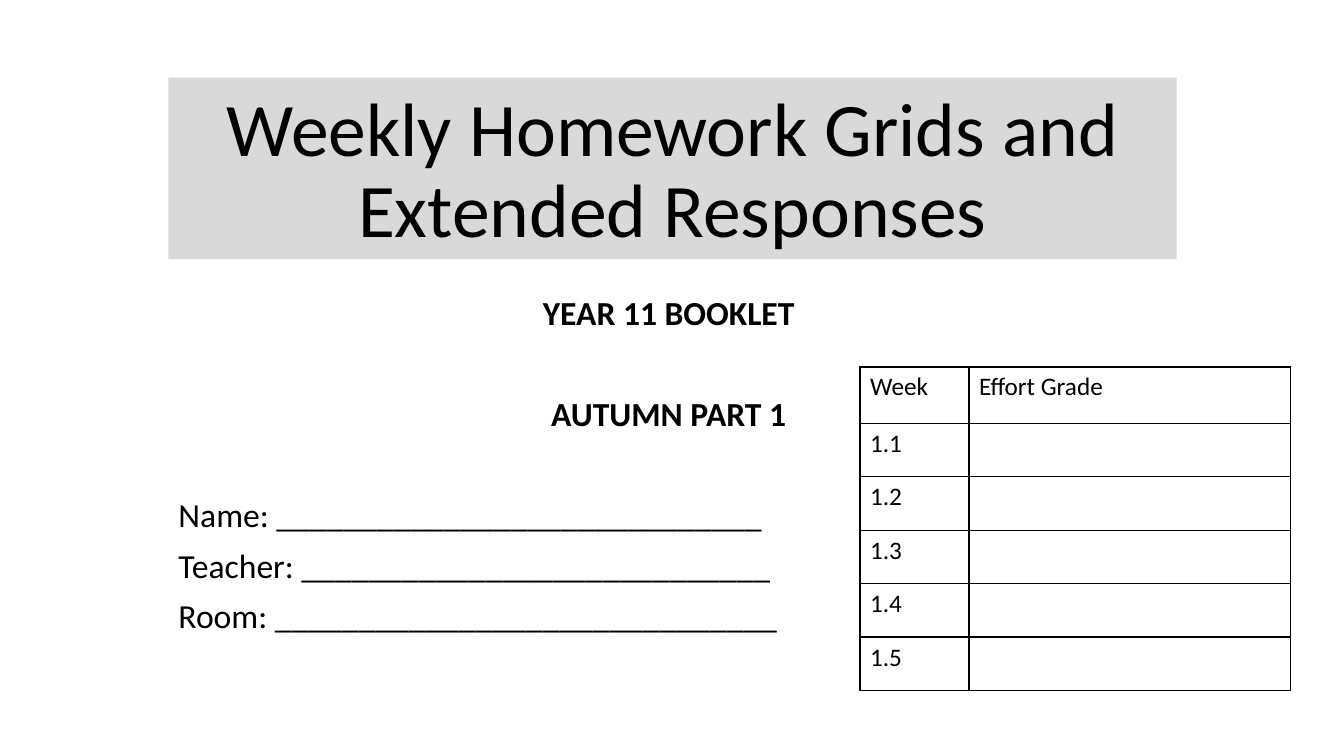
from lxml import etree
from pptx import Presentation
from pptx import util as u
from pptx.dml.color import RGBColor
from pptx.enum import text
from pptx.oxml.ns import qn

COLORS = {"ink": "000000", "paper": "FFFFFF", "banner": "D9D9D9"}
FONT = "Calibri"
HEADINGS = ["YEAR 11 BOOKLET ", "AUTUMN PART 1 "]
FIELDS = {"Name": 29, "Teacher": 28, "Room": 30}  # label: length of the rule
WEEKS = [f"1.{number}" for number in range(1, 6)]


def color(name):
    return RGBColor.from_string(COLORS[name])


def place(shape, box):
    shape.left, shape.top, shape.width, shape.height = map(u.Inches, box)


def style_font(font, size, bold=False):
    font.name, font.size, font.bold = FONT, u.Pt(size), bold
    font.color.rgb = color("ink")


def style_paragraph(paragraph, size, align, bold=False, before=0):
    paragraph.alignment = align
    paragraph.line_spacing = 0.9
    paragraph.space_before = u.Pt(before)
    for run in paragraph.runs:
        style_font(run.font, size, bold)


def add_title(slide, box):
    title = slide.shapes.title
    place(title, box)
    title.fill.solid()
    title.fill.fore_color.rgb = color("banner")
    frame = title.text_frame
    frame.text = "Weekly Homework Grids and Extended Responses"
    frame.auto_size = text.MSO_AUTO_SIZE.NONE
    frame.vertical_anchor = text.MSO_ANCHOR.BOTTOM
    style_paragraph(frame.paragraphs[0], 54, text.PP_ALIGN.CENTER)


def add_details(slide, box):
    details = slide.placeholders[1]
    place(details, box)
    frame = details.text_frame
    fields = [f"{label}: {'_' * length}" for label, length in FIELDS.items()]
    frame.text = "\n".join(HEADINGS + fields)
    frame.auto_size = text.MSO_AUTO_SIZE.NONE
    frame.vertical_anchor = text.MSO_ANCHOR.TOP
    for index, paragraph in enumerate(frame.paragraphs):
        heading = index < len(HEADINGS)
        align = text.PP_ALIGN.CENTER if heading else text.PP_ALIGN.LEFT
        # A wide gap sets off the second heading and the first field
        before = 46.4 if index in (1, len(HEADINGS)) else 10
        style_paragraph(paragraph, 24, align, heading, before)


def add_borders(cell):
    properties = cell._tc.get_or_add_tcPr()
    for position, side in enumerate(("lnL", "lnR", "lnT", "lnB")):
        line = etree.Element(qn(f"a:{side}"), w=str(u.Pt(1)))
        fill = etree.SubElement(line, qn("a:solidFill"))
        etree.SubElement(fill, qn("a:srgbClr"), val=COLORS["ink"])
        properties.insert(position, line)


def add_grades(slide, box):
    rows = [("Week", "Effort Grade")] + [(week, "") for week in WEEKS]
    table = slide.shapes.add_table(len(rows), 2, *map(u.Inches, box)).table
    table.first_row = table.horz_banding = False
    week_width, header_height = 1.08, 0.56
    table.columns[0].width = u.Inches(week_width)
    table.columns[1].width = u.Inches(box[2] - week_width)
    for index, values in enumerate(rows):
        week_height = (box[3] - header_height) / len(WEEKS)
        table.rows[index].height = u.Inches(week_height if index else header_height)
        for column, value in enumerate(values):
            cell = table.cell(index, column)
            cell.text = value
            cell.fill.solid()
            cell.fill.fore_color.rgb = color("paper")
            style_font(cell.text_frame.paragraphs[0].font, 18)
            for run in cell.text_frame.paragraphs[0].runs:
                style_font(run.font, 18)
            add_borders(cell)


def main():
    presentation = Presentation()
    presentation.slide_width = u.Inches(13.33)
    presentation.slide_height = u.Inches(7.5)
    slide = presentation.slides.add_slide(presentation.slide_layouts[0])
    # Cover: banner, pupil details, effort grades
    add_title(slide, (1.67, 0.77, 10, 1.8))
    add_details(slide, (1.67, 2.89, 10, 3.71))
    add_grades(slide, (8.53, 3.64, 4.27, 3.21))
    presentation.save("out.pptx")


if __name__ == "__main__":
    main()
